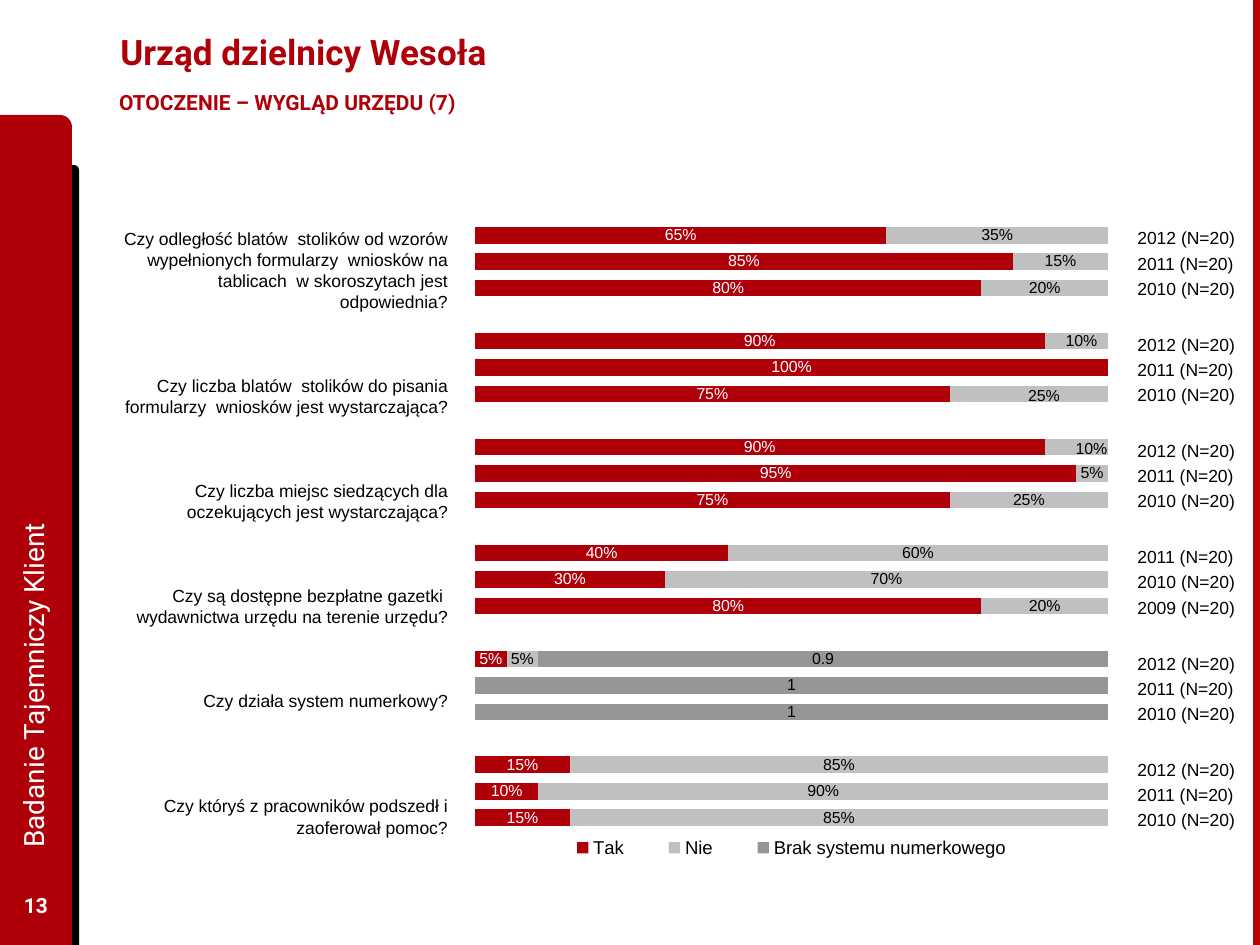
import pptx
import pptx.chart.data
import pptx.dml.color
import pptx.enum.chart
import pptx.enum.shapes
import pptx.enum.text
import pptx.oxml
import pptx.oxml.ns
import pptx.util

# Content
TITLE = "Urząd dzielnicy Wesoła"
SUBTITLE = "OTOCZENIE – WYGLĄD URZĘDU (7)"
SIDE = "Badanie Tajemniczy Klient"
PAGE = "13"
SERIES = ["Tak", "Nie", "Brak systemu numerkowego"]
N = None
# Question, first year, (yes, no, no system) for each year going back
GROUPS = [
    ("Czy odległość blatów  stolików od wzorów wypełnionych formularzy  "
     "wniosków na tablicach  w skoroszytach jest odpowiednia?",
     2012, [(0.65, 0.35, N), (0.85, 0.15, N), (0.8, 0.2, N)]),
    ("Czy liczba blatów  stolików do pisania formularzy  wniosków "
     "jest wystarczająca?",
     2012, [(0.9, 0.1, N), (1, N, N), (0.75, 0.25, N)]),
    ("Czy liczba miejsc siedzących dla oczekujących jest wystarczająca?",
     2012, [(0.9, 0.1, N), (0.95, 0.05, N), (0.75, 0.25, N)]),
    ("Czy są dostępne bezpłatne gazetki  wydawnictwa urzędu "
     "na terenie urzędu?",
     2011, [(0.4, 0.6, N), (0.3, 0.7, N), (0.8, 0.2, N)]),
    ("Czy działa system numerkowy?",
     2012, [(0.05, 0.05, 0.9), (N, N, 1), (N, N, 1)]),
    ("Czy któryś z pracowników podszedł i zaoferował pomoc?",
     2012, [(0.15, 0.85, N), (0.1, 0.9, N), (0.15, 0.85, N)]),
]
GAPS = [0, 36, 36, 36, 36, 48]  # points above each question
SHIFTS = {4: (5, 0), 6: (15, 2), 8: (15, 2)}  # moved "Nie" labels, px


class Theme:
    red, strip, black, white = "AF000A", "BD0000", "000000", "FFFFFF"
    bars = ["AF000A", "C0C0C0", "969696"]
    labels = ["FFFFFF", "000000", "000000"]
    head, body = "Roboto", "Arial"
    title, side, sub, text, legend, label = 20, 16, 12, 10, 10.6, 9.1


SCALE = 914400 / 126
CHART = (475, 198, 633, 670)
MIDDLE = pptx.enum.text.MSO_ANCHOR.MIDDLE
ALIGN = pptx.enum.text.PP_ALIGN
KIND = pptx.enum.shapes.MSO_SHAPE


def px(num):
    return pptx.util.Emu(round(num * SCALE))


def rgb(code):
    return pptx.dml.color.RGBColor.from_string(code)


def style(font, size, color, face=Theme.body, bold=False):
    font.size, font.name, font.bold = pptx.util.Pt(size), face, bold
    font.color.rgb = rgb(color)


def block(kind, box, color):
    shape = slide.shapes.add_shape(kind, *map(px, box))
    shape.shadow.inherit = False
    shape.fill.solid()
    shape.fill.fore_color.rgb = rgb(color)
    shape.line.fill.background()
    return shape


def write(frame, lines, size, color, face=Theme.body, bold=False,
          align=ALIGN.LEFT, anchor=pptx.enum.text.MSO_ANCHOR.TOP):
    frame.word_wrap, frame.vertical_anchor = True, anchor
    for i, line in enumerate(lines):
        para = frame.add_paragraph() if i else frame.paragraphs[0]
        para.text, para.alignment = line, align
        style(para.font, size, color, face, bold)
    return frame


def textbox(box, lines, *args, **opts):
    shape = slide.shapes.add_textbox(*map(px, box))
    write(shape.text_frame, lines, *args, **opts)
    return shape


def layout(x, y, w=None, h=None, inner=False):
    ns = pptx.oxml.ns.nsdecls("c")
    tags = '<c:layoutTarget val="inner"/>' if inner else ""
    if w:
        tags += '<c:xMode val="edge"/><c:yMode val="edge"/>'
    for tag, val in zip("xywh", (x, y, w, h)):
        if val is not None:
            tags += f'<c:{tag} val="{val}"/>'
    return pptx.oxml.parse_xml(
        f"<c:layout {ns}><c:manualLayout>{tags}</c:manualLayout></c:layout>")


prs = pptx.Presentation()
prs.slide_width, prs.slide_height = px(1260), px(945)
slide = prs.slides.add_slide(prs.slide_layouts[6])

# Side bands
block(KIND.ROUND_1_RECTANGLE, (49, 165, 30, 780), Theme.black)
block(KIND.ROUND_1_RECTANGLE, (0, 115, 72, 830), Theme.red)
block(KIND.RECTANGLE, (1253, 0, 7, 945), Theme.strip)

# Headings
textbox((108, 6, 979, 91), [TITLE], Theme.title, Theme.red, Theme.head, True,
        anchor=MIDDLE)
sub = textbox((94, 83, 485, 42), [SUBTITLE], Theme.sub, Theme.red,
              Theme.head, True).text_frame
sub.word_wrap = False
sub.margin_left = sub.margin_right = px(25)

# Chart: an empty category parts the groups
rows = []
for _, _, bars in GROUPS:
    rows += bars + [(N, N, N)]
rows.pop()
data = pptx.chart.data.CategoryChartData()
data.categories = [str(i + 1) for i in range(len(rows))]
for name, vals in zip(SERIES, zip(*rows)):
    data.add_series(name, vals)
chart = slide.shapes.add_chart(
    pptx.enum.chart.XL_CHART_TYPE.BAR_STACKED, *map(px, CHART), data).chart
style(chart.font, Theme.label, Theme.black)
chart.has_title = False
cats, vals = chart.category_axis, chart.value_axis
cats.reverse_order = True
cats.visible = vals.visible = False
vals.has_major_gridlines = False
vals.minimum_scale, vals.maximum_scale, vals.major_unit = 0, 1, 0.2
plot = chart.plots[0]
plot.gap_width, plot.overlap, plot.vary_by_categories = 60, 100, False
forms = ["0%", "0%", "General"]
for ser, fill, ink, form in zip(plot.series, Theme.bars, Theme.labels, forms):
    ser.format.fill.solid()
    ser.format.fill.fore_color.rgb = rgb(fill)
    tags = ser.data_labels
    tags.show_value = True
    tags.number_format, tags.number_format_is_linked = form, False
    style(tags.font, Theme.label, ink)

# Labels moved off their middle
for i, (dx, dy) in SHIFTS.items():
    tag = plot.series[1].points[i].data_label
    style(tag.font, Theme.label, Theme.black)
    node = plot.series[1].data_labels._element.xpath(
        f"c:dLbl[c:idx/@val='{i}']")[0]
    node.insert(1, layout(round(dx / CHART[2], 3), round(dy / CHART[3], 3)))

# Legend and plot places
chart.has_legend = True
legend = chart.legend
legend.position = pptx.enum.chart.XL_LEGEND_POSITION.BOTTOM
legend.include_in_layout = False
style(legend.font, Theme.legend, Theme.black)
area = chart._chartSpace.xpath("c:chart/c:plotArea")[0]
for node, place in ((area, layout(0, 0.036, 1, 0.909, True)),
                    (legend._element, layout(0.1, 0.95, 0.8, 0.04))):
    for old in node.xpath("c:layout"):
        node.remove(old)
    if node is area:
        node.insert(0, place)
    else:
        node.xpath("c:legendPos")[0].addnext(place)

# Questions
ask = block(KIND.RECTANGLE, (94, 222, 366, 627), Theme.white)
frame = write(ask.text_frame, [group[0] for group in GROUPS], Theme.text,
              Theme.black, align=ALIGN.RIGHT)
for para, gap in zip(frame.paragraphs, GAPS):
    para.space_before = pptx.util.Pt(gap)

# Years beside each group
for i, (_, year, bars) in enumerate(GROUPS):
    lines = [f"{year - k} (N=20)" for k in range(len(bars))]
    years = textbox((1125, 217 + i * 106.3, 165, 100), lines, Theme.text,
                    Theme.black)
    for para in years.text_frame.paragraphs:
        para.line_spacing = 1.2

# Page number and side title
textbox((0, 880, 72, 50), [PAGE], Theme.sub, Theme.white, Theme.head, True,
        align=ALIGN.CENTER, anchor=MIDDLE)
side = textbox((-330, 465, 726, 64), [SIDE], Theme.side, Theme.white,
               Theme.head, anchor=MIDDLE)
side.rotation = 270

prs.save("out.pptx")
